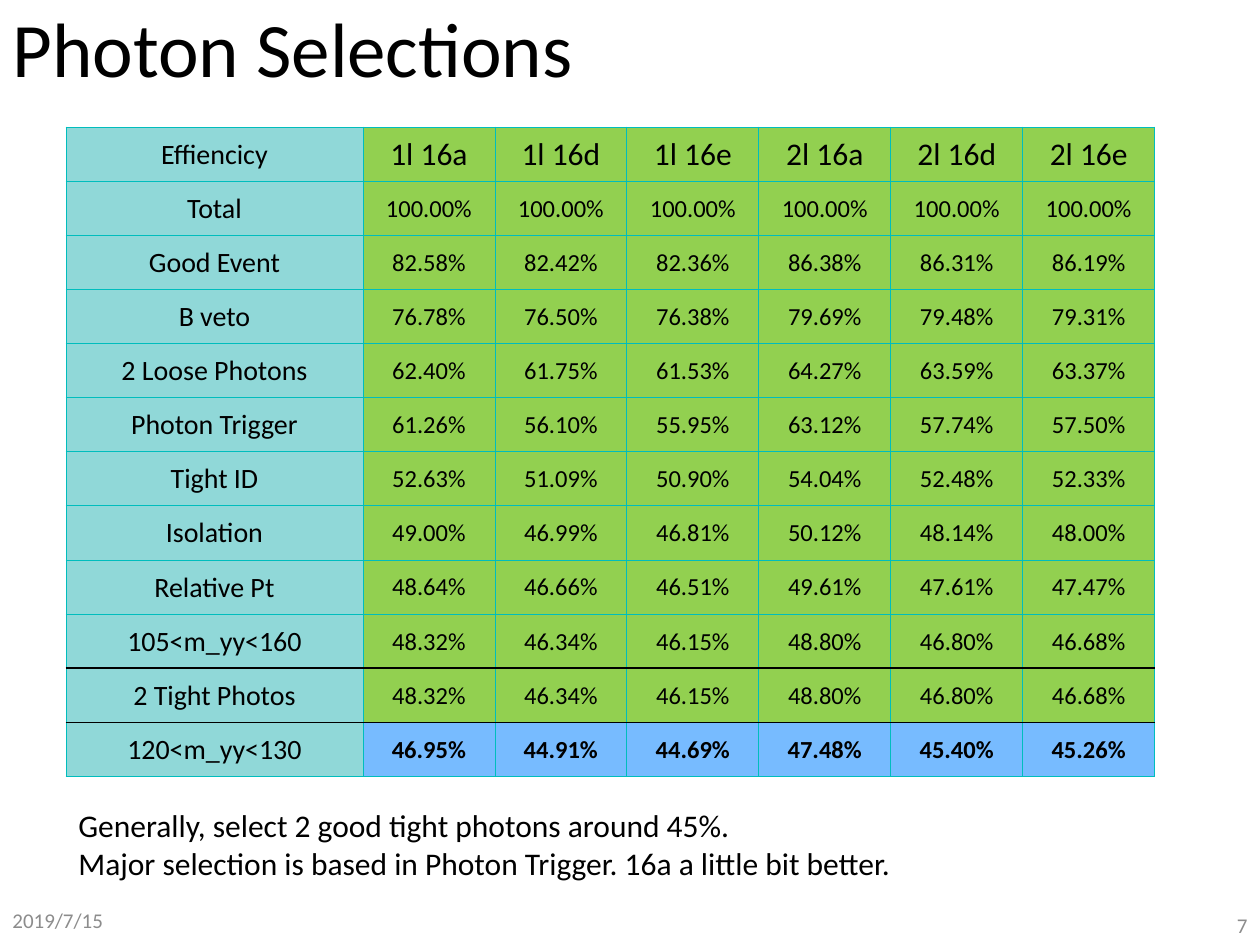
from lxml.etree import SubElement
from pptx import Presentation
from pptx.dml.color import RGBColor as RGB
from pptx.enum.text import MSO_ANCHOR as Anchor, PP_ALIGN as Align
from pptx.oxml.ns import qn
from pptx.util import Pt

PX = 914400 / 126
BLACK = RGB(0, 0, 0)
GRAY = RGB(0x8C, 0x8C, 0x8C)
TEAL = RGB(0x00, 0xBD, 0xBD)
PALE = RGB(0x90, 0xD8, 0xD8)
GREEN = RGB(0x92, 0xD0, 0x50)
BLUE = RGB(0x77, 0xBB, 0xFF)

HEAD = ["Effiencicy", "1l 16a", "1l 16d", "1l 16e", "2l 16a", "2l 16d", "2l 16e"]
CUTS = [
    ("Total", 100, 100, 100, 100, 100, 100),
    ("Good Event", 82.58, 82.42, 82.36, 86.38, 86.31, 86.19),
    ("B veto", 76.78, 76.50, 76.38, 79.69, 79.48, 79.31),
    ("2 Loose Photons", 62.40, 61.75, 61.53, 64.27, 63.59, 63.37),
    ("Photon Trigger", 61.26, 56.10, 55.95, 63.12, 57.74, 57.50),
    ("Tight ID", 52.63, 51.09, 50.90, 54.04, 52.48, 52.33),
    ("Isolation", 49.00, 46.99, 46.81, 50.12, 48.14, 48.00),
    ("Relative Pt", 48.64, 46.66, 46.51, 49.61, 47.61, 47.47),
    ("105<m_yy<160", 48.32, 46.34, 46.15, 48.80, 46.80, 46.68),
    ("2 Tight Photos", 48.32, 46.34, 46.15, 48.80, 46.80, 46.68),
    ("120<m_yy<130", 46.95, 44.91, 44.69, 47.48, 45.40, 45.26),
]
ROWS = [HEAD] + [[name] + [f"{v:.2f}%" for v in vals] for name, *vals in CUTS]
LAST = len(ROWS) - 1
DARK = (LAST - 1, LAST)  # rows with a black line above them

# lines, (left, top, width, height), size, colour, alignment, anchor, line spacing
TEXTS = [
    (["Photon Selections"], (0, 0, 1086, 105), 44, BLACK, Align.LEFT, Anchor.MIDDLE, 0.9),
    (["2019/7/15"], (0, 895, 284, 50), 12, GRAY, Align.LEFT, Anchor.MIDDLE, 1),
    (["7"], (1051, 911, 209, 29), 12, GRAY, Align.RIGHT, Anchor.MIDDLE, 1),
    (["Generally, select 2 good tight photons around 45%.",
      "Major selection is based in Photon Trigger. 16a a little bit better."],
     (66, 800, 1090, 89), 18, BLACK, Align.LEFT, Anchor.TOP, 1),
]
GRID = (66, 127, 1089, 650)
WIDE, SLIM = 297, 132


def emu(*px):
    return [round(n * PX) for n in px]


def write(para, text, size, color, align, bold=False):
    para.alignment = align
    run = para.add_run()
    run.text = text
    font = run.font
    font.name, font.size, font.bold = "Calibri", Pt(size), bold
    font.color.rgb = color


def edge(cell, side, color, width):
    line = SubElement(cell._tc.get_or_add_tcPr(), qn("a:" + side), w=str(Pt(width)))
    fill = SubElement(line, qn("a:solidFill"))
    SubElement(fill, qn("a:srgbClr"), val=str(color))


def add_text(slide, lines, box, size, color, align, anchor, space):
    frame = slide.shapes.add_textbox(*emu(*box)).text_frame
    frame.word_wrap = True
    frame.vertical_anchor = anchor
    for i, text in enumerate(lines):
        para = frame.add_paragraph() if i else frame.paragraphs[0]
        para.line_spacing = space
        write(para, text, size, color, align)


def style(cell, row, col, text):
    cell.margin_left, cell.margin_top, cell.margin_right, cell.margin_bottom = emu(1, 1, 1, 0)
    cell.vertical_anchor = Anchor.MIDDLE
    size = 16 if col == 0 else 18 if row == 0 else 14
    bold = row == LAST and col > 0
    write(cell.text_frame.paragraphs[0], text, size, BLACK, Align.CENTER, bold)
    # Borders must come before the fill in the cell's XML
    for side, line in (("lnL", None), ("lnR", None), ("lnT", row), ("lnB", row + 1)):
        edge(cell, side, *((BLACK, 1) if line in DARK else (TEAL, 0.5)))
    cell.fill.solid()
    cell.fill.fore_color.rgb = PALE if col == 0 else BLUE if row == LAST else GREEN


def add_grid(slide):
    table = slide.shapes.add_table(len(ROWS), len(HEAD), *emu(*GRID)).table
    table.first_row = table.horz_banding = False
    for i, col in enumerate(table.columns):
        col.width = emu(SLIM if i else WIDE)[0]
    for r, texts in enumerate(ROWS):
        table.rows[r].height = emu(GRID[3] / len(ROWS))[0]
        for c, text in enumerate(texts):
            style(table.cell(r, c), r, c, text)


def main():
    deck = Presentation()
    deck.slide_width, deck.slide_height = emu(1260, 945)
    slide = deck.slides.add_slide(deck.slide_layouts[6])
    add_grid(slide)
    for item in TEXTS:
        add_text(slide, *item)
    deck.save("out.pptx")


if __name__ == "__main__":
    main()
